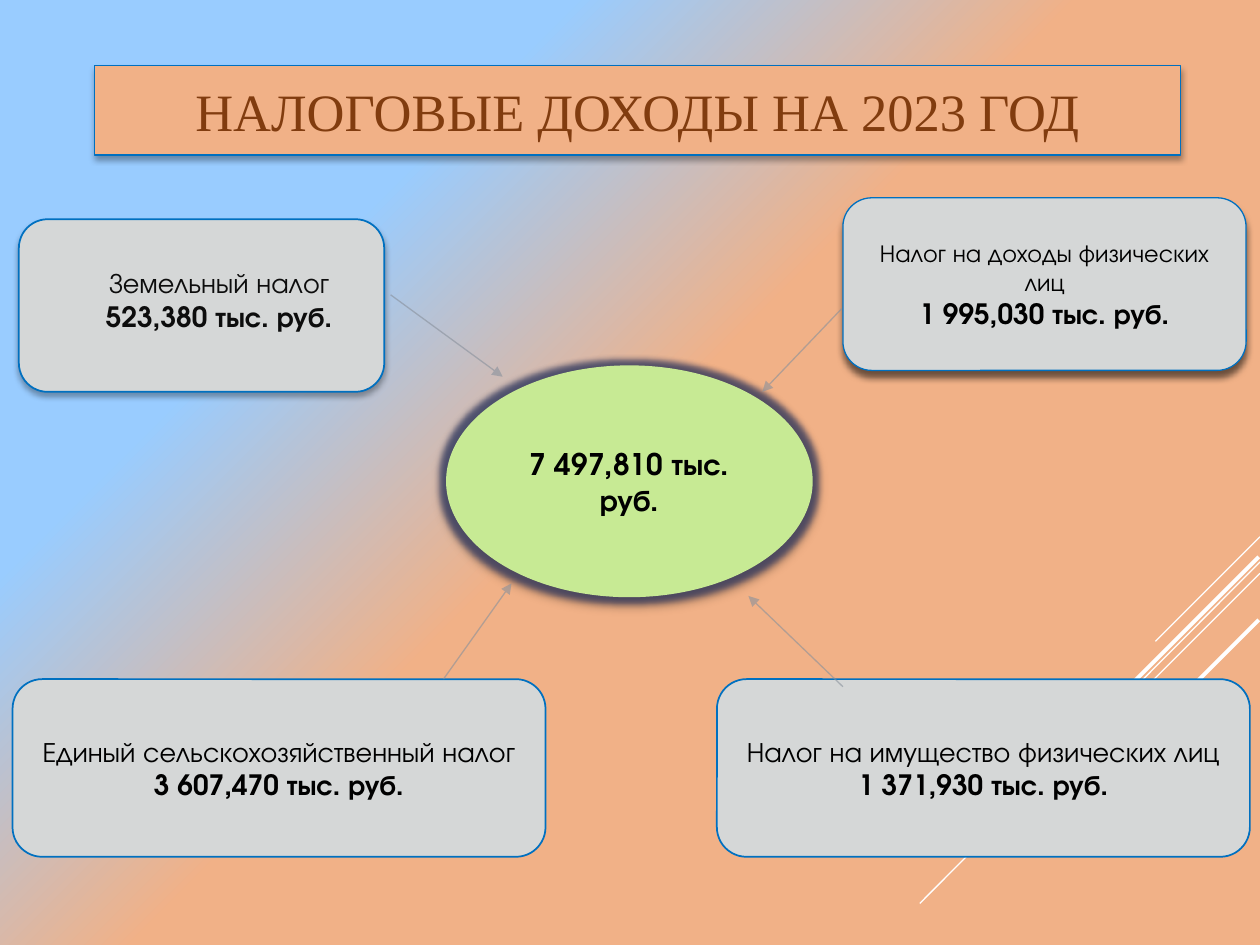
from lxml import etree
from pptx import Presentation
from pptx import util as u
from pptx.dml.color import RGBColor
from pptx.enum import shapes, text
from pptx.oxml.ns import qn

ORANGE = RGBColor(0xF1, 0xB1, 0x87)
SKY = RGBColor(0x99, 0xCC, 0xFF)
BLUE = RGBColor(0x00, 0x70, 0xC0)
BROWN = RGBColor(0x81, 0x3C, 0x0F)
GREY = RGBColor(0xD5, 0xD7, 0xD7)
GREEN = RGBColor(0xC7, 0xEA, 0x94)
ARROW_GREY = RGBColor(0x89, 0x91, 0x9C)
NEAR_BLACK = RGBColor(0x0D, 0x0D, 0x0D)
BLACK = RGBColor(0x00, 0x00, 0x00)
WHITE = RGBColor(0xFF, 0xFF, 0xFF)
GLOW = RGBColor(0x2A, 0x35, 0x60)

BODY_FONT = "TeX Gyre Adventor"
SOFT_SHADOW = (32, 3.5, 2.2)  # opacity in percent, blur and distance in points
STRONG_SHADOW = (55, 4, 4)

# x1, y1, x2, y2, width in points
STRIPES = [
    (10, 4.26, 9.17, 5.09, 0.75),
    (10, 4.46, 7.3, 7.17, 0.75),
    (10, 4.55, 8.28, 6.27, 0.75),
    (9.99, 4.42, 8.42, 5.99, 2.25),
    (9.99, 4.92, 8.85, 6.06, 2.25),
]
ARROWS = [
    (3.1, 2.34, 3.99, 2.99),
    (6.68, 2.45, 6.05, 3.11),
    (3.52, 5.39, 4.06, 4.63),
    (6.69, 5.45, 5.94, 4.73),
]


def add_color(parent, color, opacity):
    node = etree.SubElement(parent, qn("a:srgbClr"), val=str(color))
    etree.SubElement(node, qn("a:alpha"), val=str(opacity * 1000))


def add_effects(shape, shadow=None, glow=None):
    """Replace inherited effects; glow is (color, opacity, radius in points)."""
    shape.shadow.inherit = False
    effects = shape._element.spPr.find(qn("a:effectLst"))
    if glow:
        color, opacity, radius = glow
        node = etree.SubElement(effects, qn("a:glow"), rad=str(u.Pt(radius)))
        add_color(node, color, opacity)
    if shadow:
        opacity, blur, distance = shadow
        node = etree.SubElement(
            effects, qn("a:outerShdw"), blurRad=str(u.Pt(blur)),
            dist=str(u.Pt(distance)), dir="5400000", rotWithShape="0")
        add_color(node, BLACK, opacity)


def set_background(slide):
    fill = slide.background.fill
    fill.gradient()
    fill.gradient_angle = 315
    stops = zip(fill.gradient_stops, [(0.26, SKY), (0.49, ORANGE)])
    for stop, (position, color) in stops:
        stop.position = position
        stop.color.rgb = color


def add_line(slide, ends, color, width):
    line = slide.shapes.add_connector(
        shapes.MSO_CONNECTOR.STRAIGHT, *(u.Inches(value) for value in ends))
    line.line.color.rgb = color
    line.line.width = u.Pt(width)
    etree.SubElement(line._element.spPr, qn("a:effectLst"))
    return line


def add_arrow(slide, ends):
    line = add_line(slide, ends, ARROW_GREY, 0.75)
    outline = line.line._get_or_add_ln()
    color = outline.find(qn("a:solidFill")).find(qn("a:srgbClr"))
    etree.SubElement(color, qn("a:alpha"), val="60000")
    etree.SubElement(outline, qn("a:tailEnd"), type="triangle")


def style_paragraph(paragraph, font_name, size, color, bold=False):
    paragraph.alignment = text.PP_ALIGN.CENTER
    paragraph.font.name = font_name
    paragraph.font.size = u.Pt(size)
    paragraph.font.color.rgb = color
    paragraph.font.bold = bold


def set_title(slide):
    title = slide.shapes.title
    title.left, title.top = u.Inches(0.75), u.Inches(0.52)
    title.width, title.height = u.Inches(8.62), u.Inches(0.71)
    title.fill.solid()
    title.fill.fore_color.rgb = ORANGE
    title.line.color.rgb = BLUE
    title.line.width = u.Pt(0.75)
    add_effects(title, SOFT_SHADOW)
    frame = title.text_frame
    frame.text = "НАЛОГОВЫЕ ДОХОДЫ НА 2023 ГОД"
    frame.vertical_anchor = text.MSO_ANCHOR.MIDDLE
    style_paragraph(frame.paragraphs[0], "Times New Roman", 30, BROWN)


def add_filled_shape(slide, kind, box, color):
    shape = slide.shapes.add_shape(kind, *(u.Inches(value) for value in box))
    shape.fill.solid()
    shape.fill.fore_color.rgb = color
    shape.text_frame.word_wrap = True
    shape.text_frame.vertical_anchor = text.MSO_ANCHOR.MIDDLE
    return shape


def add_tax_box(slide, box, name, amount, name_size=16, color=BLACK,
                line_width=1, shadow=None):
    shape = add_filled_shape(
        slide, shapes.MSO_SHAPE.ROUNDED_RECTANGLE, box, GREY)
    shape.line.color.rgb = BLUE
    shape.line.width = u.Pt(line_width)
    add_effects(shape, shadow)
    frame = shape.text_frame
    frame.text = f"{name}\n{amount} тыс. руб."
    style_paragraph(frame.paragraphs[0], BODY_FONT, name_size, color)
    style_paragraph(frame.paragraphs[1], BODY_FONT, 16, color, bold=True)
    return shape


def add_total(slide):
    total = add_filled_shape(
        slide, shapes.MSO_SHAPE.OVAL, (3.54, 2.9, 2.91, 1.84), GREEN)
    total.line.fill.background()
    add_effects(total, SOFT_SHADOW, glow=(GLOW, 70, 7))
    total.text_frame.text = "7 497,810 тыс. руб."
    style_paragraph(
        total.text_frame.paragraphs[0], BODY_FONT, 17, BLACK, bold=True)


def main():
    presentation = Presentation()
    presentation.slide_width = u.Inches(10)
    presentation.slide_height = u.Inches(7.5)
    slide = presentation.slides.add_slide(presentation.slide_layouts[5])
    set_background(slide)
    for *ends, width in STRIPES:
        add_line(slide, ends, WHITE, width)
    set_title(slide)

    land = add_tax_box(slide, (0.15, 1.74, 2.9, 1.37), "Земельный налог",
                       "523,380", color=NEAR_BLACK, shadow=SOFT_SHADOW)
    land.text_frame.margin_left = u.Inches(0.28)
    land.text_frame.margin_right = land.text_frame.margin_top = 0
    land.text_frame.margin_bottom = u.Inches(0.1)
    add_total(slide)
    add_tax_box(slide, (6.69, 1.57, 3.2, 1.37),
                "Налог на доходы физических лиц", "1 995,030",
                name_size=14, line_width=0.75, shadow=STRONG_SHADOW)
    add_tax_box(slide, (0.1, 5.39, 4.23, 1.41),
                "Единый сельскохозяйственный налог", "3 607,470")
    add_tax_box(slide, (5.69, 5.39, 4.23, 1.41),
                "Налог на имущество физических лиц", "1 371,930")
    for ends in ARROWS:
        add_arrow(slide, ends)
    presentation.save("out.pptx")


if __name__ == "__main__":
    main()
